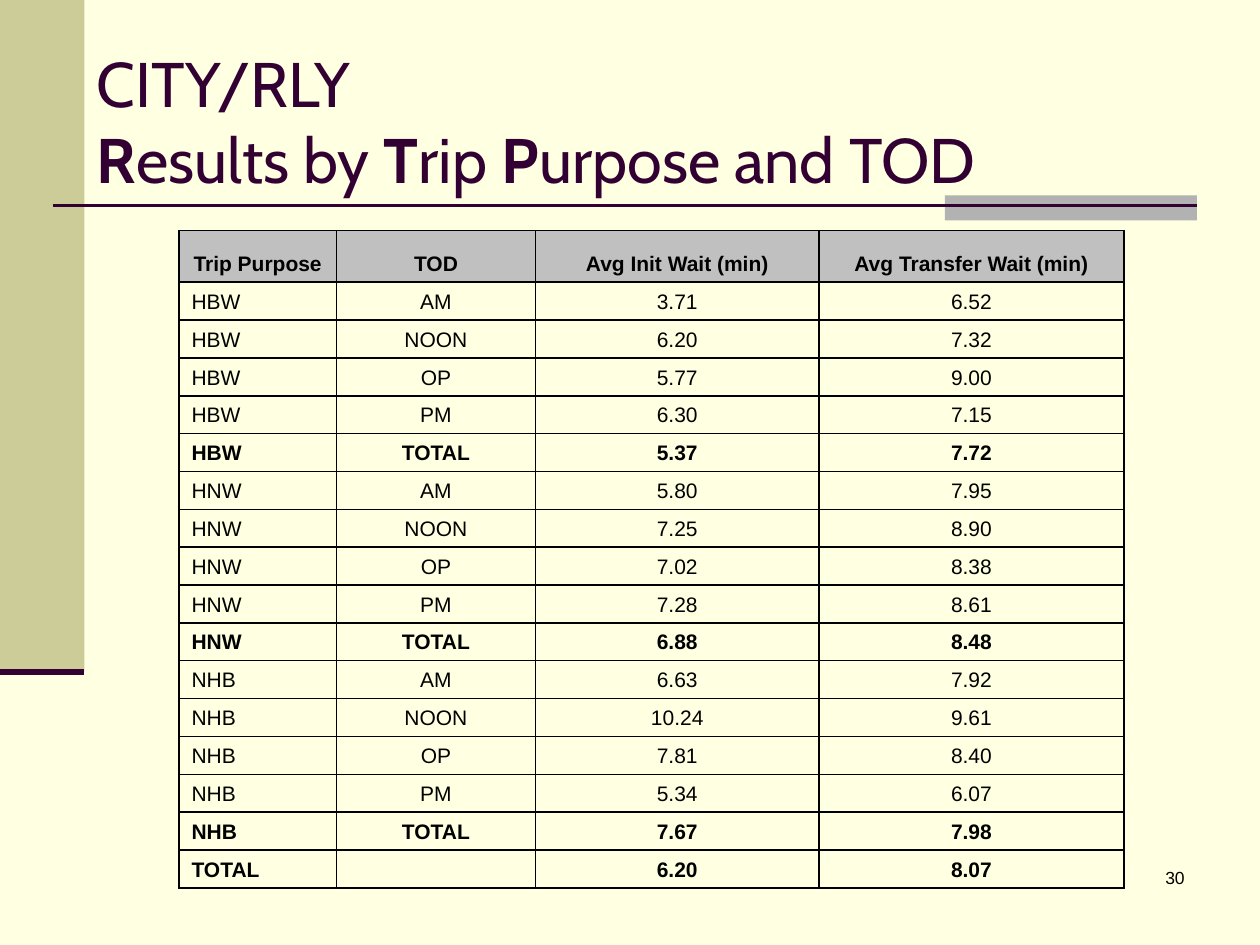
from lxml import etree
from pptx import Presentation
from pptx.dml.color import RGBColor
from pptx.enum.shapes import MSO_CONNECTOR, MSO_SHAPE
from pptx.enum.text import MSO_ANCHOR, PP_ALIGN
from pptx.oxml.ns import qn
from pptx.util import Inches, Pt

RECT = MSO_SHAPE.RECTANGLE
LINE = MSO_CONNECTOR.STRAIGHT
MIDDLE, BOTTOM = MSO_ANCHOR.MIDDLE, MSO_ANCHOR.BOTTOM
LEFT, CENTER, RIGHT = PP_ALIGN.LEFT, PP_ALIGN.CENTER, PP_ALIGN.RIGHT
CREAM = RGBColor(0xFF, 0xFF, 0xE1)
KHAKI = RGBColor(0xCC, 0xCC, 0x99)
GRAY = RGBColor(0xB2, 0xB2, 0xB2)
SILVER = RGBColor(0xC0, 0xC0, 0xC0)
PLUM = RGBColor(0x33, 0x00, 0x33)
BLACK = RGBColor(0x00, 0x00, 0x00)

HEADS = ["Trip Purpose", "TOD", "Avg Init Wait (min)", "Avg Transfer Wait (min)"]
TIMES = ["AM", "NOON", "OP", "PM", "TOTAL"]
WAITS = {
    "HBW": [("3.71", "6.52"), ("6.20", "7.32"), ("5.77", "9.00"),
            ("6.30", "7.15"), ("5.37", "7.72")],
    "HNW": [("5.80", "7.95"), ("7.25", "8.90"), ("7.02", "8.38"),
            ("7.28", "8.61"), ("6.88", "8.48")],
    "NHB": [("6.63", "7.92"), ("10.24", "9.61"), ("7.81", "8.40"),
            ("5.34", "6.07"), ("7.67", "7.98")],
}
WIDTHS = [1.25, 1.58, 2.25, 2.42]


def style(run, name, size, color, bold=False):
    run.font.name = name
    run.font.size = Pt(size)
    run.font.color.rgb = color
    run.font.bold = bold


def edge(cell):
    props = cell._tc.get_or_add_tcPr()
    for tag in ("a:lnL", "a:lnR", "a:lnT", "a:lnB"):
        line = etree.SubElement(props, qn(tag), w=str(Pt(1)))
        fill = etree.SubElement(line, qn("a:solidFill"))
        etree.SubElement(fill, qn("a:srgbClr"), val=str(BLACK))


prs = Presentation()
prs.slide_width = Inches(10)
prs.slide_height = Inches(7.5)
slide = prs.slides.add_slide(prs.slide_layouts[6])
slide.background.fill.solid()
slide.background.fill.fore_color.rgb = CREAM
shapes = slide.shapes

for x, y, w, h, color in [(0, 0, 0.67, 5.33, KHAKI), (7.5, 1.55, 2, 0.2, GRAY)]:
    bar = shapes.add_shape(RECT, Inches(x), Inches(y), Inches(w), Inches(h))
    bar.shadow.inherit = False
    bar.fill.solid()
    bar.fill.fore_color.rgb = color
    bar.line.fill.background()

for start, end, y, width in [(0.42, 9.5, 1.63, 1.5), (0, 0.67, 5.33, 3.5)]:
    rule = shapes.add_connector(LINE, Inches(start), Inches(y), Inches(end), Inches(y))
    rule.line.color.rgb = PLUM
    rule.line.width = Pt(width)
    etree.SubElement(rule._element.spPr, qn("a:effectLst"))

title = shapes.add_textbox(Inches(0.67), Inches(0.33), Inches(8.5), Inches(1.25))
frame = title.text_frame
frame.word_wrap = True
frame.vertical_anchor = MIDDLE
para = frame.paragraphs[0]
para.text = "CITY/RLY\v"
style(para.runs[0], "Cabin", 36, PLUM)
for text in ["R", "esults by ", "T", "rip ", "P", "urpose and TOD"]:
    run = para.add_run()
    run.text = text
    style(run, "Cabin", 36, PLUM, len(text) == 1)

rows = [HEADS]
for trip, pairs in WAITS.items():
    rows += [[trip, time, *pair] for time, pair in zip(TIMES, pairs)]
rows.append(["TOTAL", "", "6.20", "8.07"])

table = shapes.add_table(len(rows), len(HEADS), Inches(1.42), Inches(1.83),
                         Inches(7.5), Inches(4.57)).table
table.first_row = False
table.horz_banding = False
for col, width in zip(table.columns, WIDTHS):
    col.width = Inches(width)
for i, row in enumerate(rows):
    head = i == 0
    table.rows[i].height = Inches(0.41 if head else 0.26)
    for j, text in enumerate(row):
        cell = table.cell(i, j)
        edge(cell)
        if head:
            cell.fill.solid()
            cell.fill.fore_color.rgb = SILVER
        else:
            cell.fill.background()
        cell.vertical_anchor = BOTTOM
        para = cell.text_frame.paragraphs[0]
        para.text = text
        para.alignment = CENTER if head or j else LEFT
        for run in para.runs:
            style(run, "Arial", 12, BLACK, head or "TOTAL" in row)
        if not text:
            etree.SubElement(para._p, qn("a:endParaRPr"), sz="1200")

page = shapes.add_textbox(Inches(7.42), Inches(6.83), Inches(2.08), Inches(0.5))
page.text_frame.word_wrap = True
para = page.text_frame.paragraphs[0]
para.text = "30"
para.alignment = RIGHT
style(para.runs[0], "Arial", 10, BLACK)

prs.save("out.pptx")
